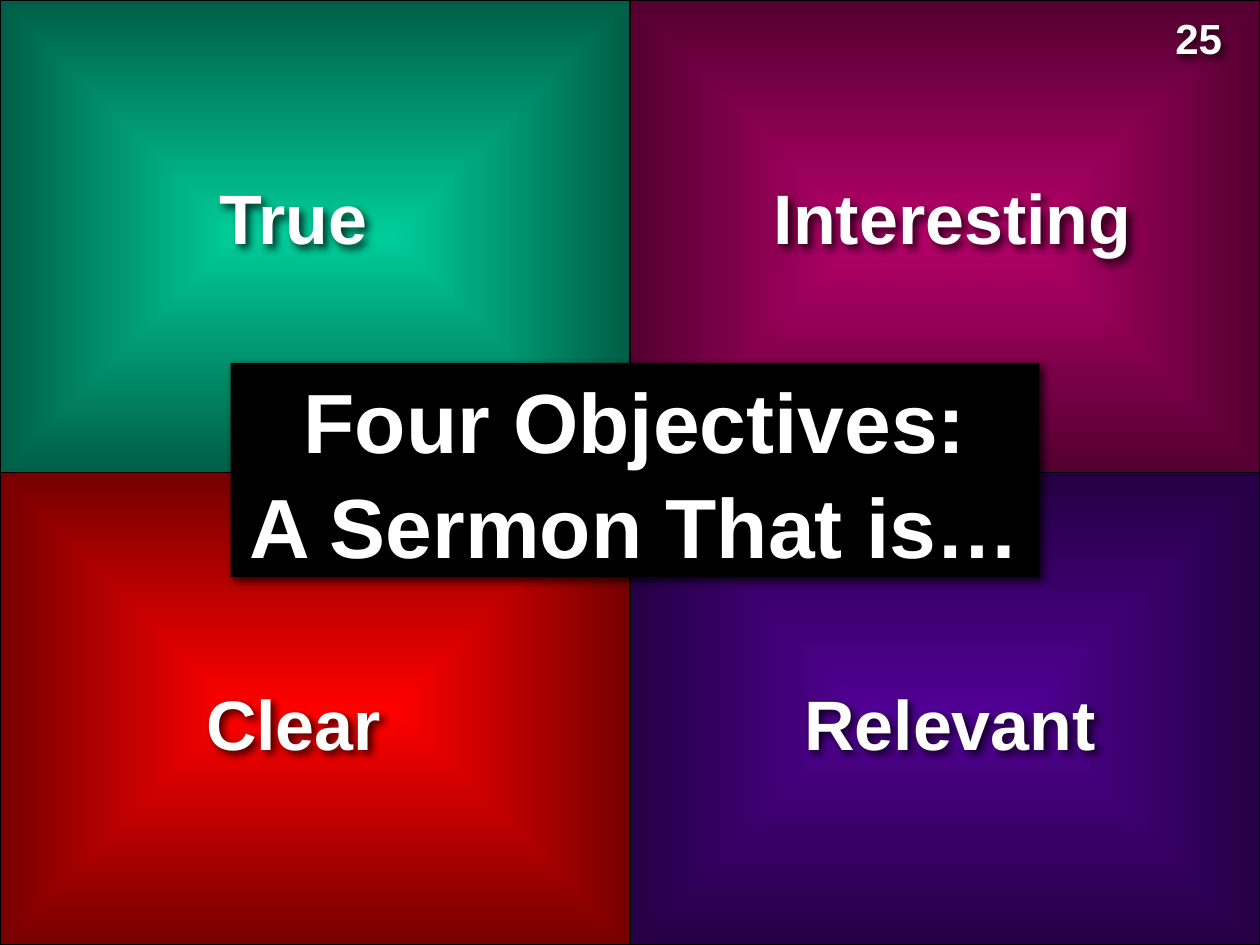
from lxml import etree
from pptx import Presentation, util as u
from pptx.dml.color import RGBColor
from pptx.enum import shapes, text
from pptx.oxml.ns import qn

WHITE = RGBColor(0xFF, 0xFF, 0xFF)
BLACK = RGBColor(0, 0, 0)
GREEN = RGBColor(0x00, 0xCC, 0x99), RGBColor(0x00, 0x5E, 0x46)
PINK = RGBColor(0xB5, 0x00, 0x69), RGBColor(0x54, 0x00, 0x31)
RED = RGBColor(0xFF, 0x00, 0x00), RGBColor(0x76, 0x00, 0x00)
VIOLET = RGBColor(0x50, 0x00, 0x93), RGBColor(0x25, 0x00, 0x44)

WIDE, HIGH = u.Inches(10), u.Inches(7.5)
CELL_W, CELL_H = WIDE // 2, HIGH // 2
LABEL_H = 0.77
LABEL_TOPS = 1.32, 5.33
FONT = {"name": "Arial", "bold": True}
FRAME = {"word_wrap": True, "auto_size": text.MSO_AUTO_SIZE.NONE,
         "vertical_anchor": text.MSO_ANCHOR.MIDDLE}

PANELS = [
    ("True", 0, 0, GREEN, 1.29, 2.08),
    ("Interesting", 1, 0, PINK, 5.75, 3.62),
    ("Relevant", 1, 1, VIOLET, 6.04, 3),
    ("Clear", 0, 1, RED, 0.83, 3),
]


def apply(item, values):
    for key, value in values.items():
        setattr(item, key, value)


def place(*sizes):
    return [u.Inches(size) for size in sizes]


def shade(shape):
    effects = etree.SubElement(shape._element.spPr, qn("a:effectLst"))
    outer = etree.SubElement(effects, qn("a:outerShdw"), blurRad=str(u.Pt(5)),
                             dist=str(u.Pt(3)), dir="2700000", algn="tl",
                             rotWithShape="0")
    color = etree.SubElement(outer, qn("a:srgbClr"), val=str(BLACK))
    etree.SubElement(color, qn("a:alpha"), val="75000")


def write(shape, words, size, align):
    frame = shape.text_frame
    apply(frame, FRAME)
    para = frame.paragraphs[0]
    para.text = words
    apply(para, {"alignment": align, "line_spacing": 1.05, "space_before": u.Pt(0)})
    for run in para.runs:
        apply(run.font, FONT | {"size": u.Pt(size)})
        run.font.color.rgb = WHITE
    shade(shape)


def add_panel(slide, col, row, colors):
    panel = slide.shapes.add_shape(
        shapes.MSO_SHAPE.RECTANGLE, col * CELL_W, row * CELL_H, CELL_W, CELL_H)
    panel.shadow.inherit = False
    panel.line.color.rgb = BLACK
    panel.line.width = u.Pt(1)
    panel.fill.gradient()
    for stop, color in zip(panel.fill.gradient_stops, colors):
        stop.color.rgb = color
    grad = panel._element.spPr.find(qn("a:gradFill"))
    grad.remove(grad.find(qn("a:lin")))
    burst = etree.SubElement(grad, qn("a:path"), path="rect")
    etree.SubElement(burst, qn("a:fillToRect"),
                     {side: "50000" for side in "ltrb"})


def add_label(slide, words, box, size=40, align=text.PP_ALIGN.CENTER):
    write(slide.shapes.add_textbox(*place(*box)), words, size, align)


def add_title(slide, words):
    title = slide.shapes.title
    left, top, width, height = place(1.83, 2.88, 6.42, 1.7)
    apply(title, {"left": left, "top": top, "width": width, "height": height})
    title.fill.solid()
    title.fill.fore_color.rgb = BLACK
    title.line.fill.background()
    write(title, words, 48, text.PP_ALIGN.CENTER)
    slide.shapes._spTree.append(title._element)


def main():
    deck = Presentation()
    apply(deck, {"slide_width": WIDE, "slide_height": HIGH})
    slide = deck.slides.add_slide(deck.slide_layouts[5])
    slide.background.fill.solid()
    slide.background.fill.fore_color.rgb = BLACK
    for words, col, row, colors, left, width in PANELS:
        add_panel(slide, col, row, colors)
        add_label(slide, words, (left, LABEL_TOPS[row], width, LABEL_H))
    add_title(slide, "Four Objectives:\vA Sermon That is…")
    add_label(slide, "25", (9.23, 0.04, 0.77, 0.5), 24, text.PP_ALIGN.LEFT)
    deck.save("out.pptx")


if __name__ == "__main__":
    main()
